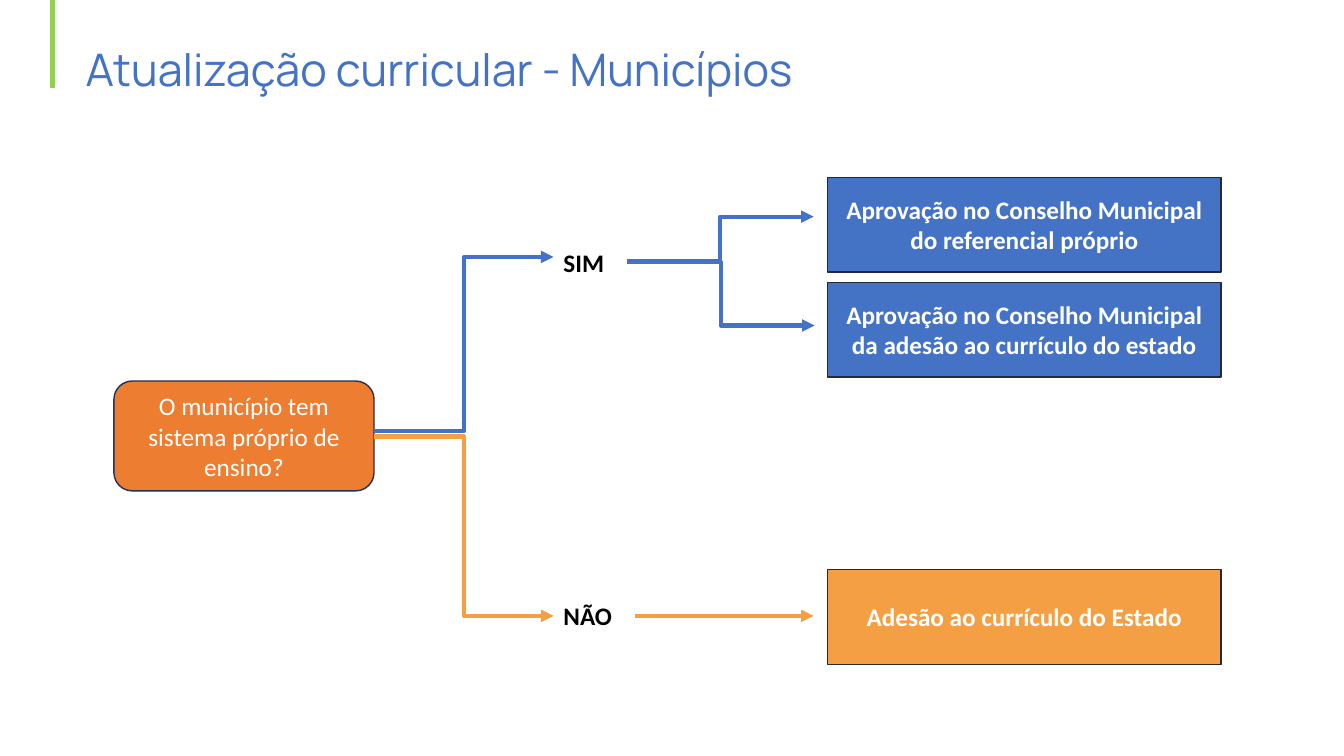
import pptx
import pptx.util
import pptx.dml.color
import pptx.enum.shapes
import pptx.enum.text
import pptx.oxml
import pptx.oxml.ns

PX = 9144  # EMU per px, 100 px to the inch
BLUE, ORANGE, AMBER, GREEN = "4472C4", "ED7D31", "F59F44", "92D050"
NAVY, SLATE, WHITE, BLACK = "1E3256", "222A35", "FFFFFF", "000000"

SHAPES = pptx.enum.shapes.MSO_SHAPE
CONNECTORS = pptx.enum.shapes.MSO_CONNECTOR
ALIGN = pptx.enum.text.PP_ALIGN
ANCHOR = pptx.enum.text.MSO_ANCHOR

LABEL = {"name": "Calibri", "size": pptx.util.Pt(18), "bold": True}
QUESTION = {**LABEL, "bold": False}
TITLE = {"name": "Manrope", "size": pptx.util.Pt(32), "bold": False}


def px(*lengths):
    return [pptx.util.Emu(length * PX) for length in lengths]


def rgb(color):
    return pptx.dml.color.RGBColor.from_string(color)


def write_text(shape, text, font_values, color, align, anchor):
    frame = shape.text_frame
    frame_values = {"word_wrap": True, "vertical_anchor": anchor,
                    "auto_size": pptx.enum.text.MSO_AUTO_SIZE.NONE}
    for name, value in frame_values.items():
        setattr(frame, name, value)
    paragraph = frame.paragraphs[0]
    paragraph.alignment = align
    run = paragraph.add_run()
    run.text = text
    for name, value in font_values.items():
        setattr(run.font, name, value)
    run.font.color.rgb = rgb(color)


def add_box(slide, box, text, fill, line, font_values=LABEL, kind=SHAPES.RECTANGLE):
    shape = slide.shapes.add_shape(kind, *px(*box))
    shape.shadow.inherit = False
    shape.fill.solid()
    shape.fill.fore_color.rgb = rgb(fill)
    shape.line.color.rgb = rgb(line)
    shape.line.width = pptx.util.Pt(1)
    write_text(shape, text, font_values, WHITE, ALIGN.CENTER, ANCHOR.MIDDLE)


def add_line(slide, ends, color, kind=CONNECTORS.ELBOW, arrow=True):
    connector = slide.shapes.add_connector(kind, *px(*ends))
    connector.line.color.rgb = rgb(color)
    connector.line.width = pptx.util.Pt(3)
    if arrow:
        line = connector.line._get_or_add_ln()
        tail = pptx.oxml.parse_xml(
            f'<a:tailEnd {pptx.oxml.ns.nsdecls("a")} type="triangle"/>')
        line.append(tail)
    effects = pptx.oxml.parse_xml(f'<a:effectLst {pptx.oxml.ns.nsdecls("a")}/>')
    connector._element.spPr.append(effects)


def add_header(slide, box, text):
    """Title with the green bar that hangs from the slide's top edge."""
    left, top, width, height = box
    bar = left - 23
    add_line(slide, (bar, 87, bar, 0), GREEN, CONNECTORS.STRAIGHT, arrow=False)
    title = slide.shapes.title
    title.left, title.top, title.width, title.height = px(left, top, width, height)
    write_text(title, text, TITLE, BLUE, ALIGN.LEFT, ANCHOR.TOP)


def add_answer(slide, box, text):
    answer = slide.shapes.add_textbox(*px(*box))
    write_text(answer, text, LABEL, BLACK, ALIGN.LEFT, ANCHOR.TOP)


def add_decision_tree(slide, box):
    """Question on the left, answers in the middle, outcomes on the right."""
    left, top, width, height = box
    question_right = left + 258
    answer_left = left + 436
    fork_left = answer_left + 73
    outcome_width, outcome_height = 390, 94
    outcome_left = left + width - outcome_width
    arrow_end = outcome_left - 14
    no_top = top + height - outcome_height
    no_line = no_top + 46

    add_box(slide, (left, top + 202, 258, 109),
            "O município tem sistema próprio de ensino?",
            ORANGE, NAVY, QUESTION, SHAPES.ROUNDED_RECTANGLE)
    add_answer(slide, (answer_left, top + 64, 81, 71), "SIM")
    add_answer(slide, (answer_left, no_top + 26, 81, 40), "NÃO")

    outcomes = [
        (top, "Aprovação no Conselho Municipal do referencial próprio", BLUE),
        (top + 104, "Aprovação no Conselho Municipal da adesão ao currículo do estado", BLUE),
        (no_top, "Adesão ao currículo do Estado", AMBER),
    ]
    for outcome_top, text, fill in outcomes:
        add_box(slide, (outcome_left, outcome_top, outcome_width, outcome_height),
                text, fill, SLATE)

    add_line(slide, (question_right, top + 252, answer_left, top + 79), BLUE)
    add_line(slide, (question_right, top + 257, answer_left, no_line), AMBER)
    add_line(slide, (fork_left, top + 83, arrow_end, top + 39), BLUE)
    add_line(slide, (fork_left, top + 84, arrow_end + 1, top + 147), BLUE)
    add_line(slide, (answer_left + 81, no_line, arrow_end, no_line),
             AMBER, CONNECTORS.STRAIGHT)


def main():
    presentation = pptx.Presentation()
    presentation.slide_width, presentation.slide_height = px(1333, 750)
    title_only = presentation.slide_layouts[5]
    slide = presentation.slides.add_slide(title_only)
    add_header(slide, (75, 36, 859, 64), "Atualização curricular - Municípios")
    add_decision_tree(slide, (113, 176, 1098, 483))
    presentation.save("out.pptx")


if __name__ == "__main__":
    main()
